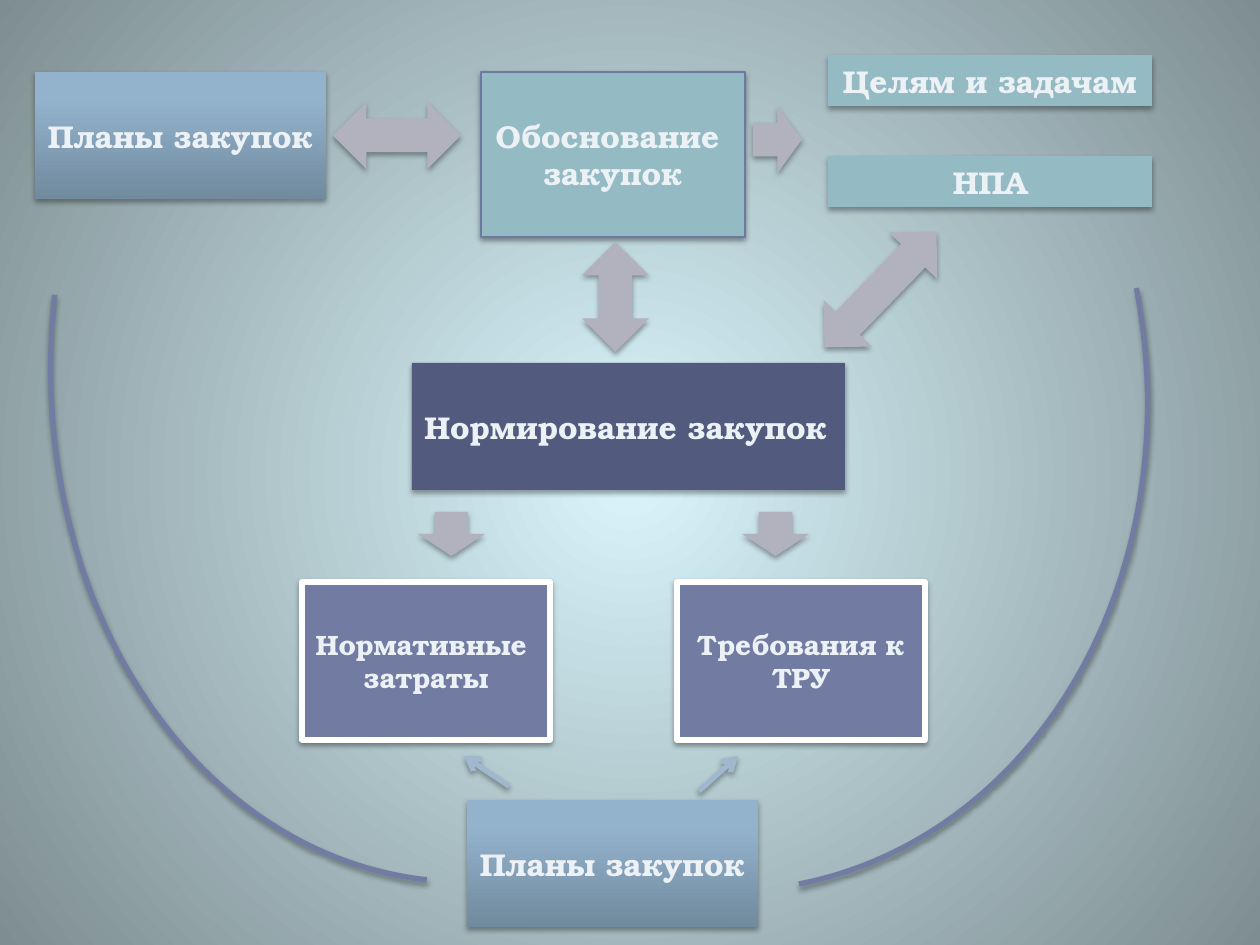
from dataclasses import dataclass

from lxml import etree
from pptx import Presentation
from pptx.dml.color import RGBColor
from pptx.enum.shapes import MSO_CONNECTOR, MSO_SHAPE
from pptx.enum.text import MSO_ANCHOR, MSO_AUTO_SIZE, PP_ALIGN
from pptx.oxml import parse_xml
from pptx.oxml.ns import nsdecls, qn
from pptx.util import Emu, Pt

RECT, ARC = MSO_SHAPE.RECTANGLE, MSO_SHAPE.ARC
ACROSS, UPRIGHT = MSO_SHAPE.LEFT_RIGHT_ARROW, MSO_SHAPE.UP_DOWN_ARROW
RIGHT, DOWN = MSO_SHAPE.RIGHT_ARROW, MSO_SHAPE.DOWN_ARROW
STRAIGHT = MSO_CONNECTOR.STRAIGHT
CENTER, LEFT = PP_ALIGN.CENTER, PP_ALIGN.LEFT
MIDDLE, FIXED = MSO_ANCHOR.MIDDLE, MSO_AUTO_SIZE.NONE


@dataclass(frozen=True)
class Theme:
    font: str = "TeX Gyre Bonum"
    text: str = "ECF1F5"
    large: int = 18
    small: int = 16
    teal: str = "94BAC3"
    navy: str = "525B7E"
    violet: str = "727CA3"
    outline: str = "6E79A1"
    white: str = "FFFFFF"
    arrow: str = "B2B2BE"
    pale: str = "9FB8CD"
    thin: float = 0.75
    thick: float = 3
    plan: tuple = ((0, "718A9E"), (80, "93B3CD"), (100, "93B4CF"))
    backdrop: tuple = ((0, "D9F5FC"), (100, "7E8D90"))
    flat_shadow: tuple = (35, 1.8)
    lined_shadow: tuple = (38, 1.6)
    blur: float = 3.1


THEME = Theme()
WIDTH, HEIGHT = 1260, 945
SCALE = 914400 / 126

PLAN_SIZE = (291, 127)
GOAL_SIZE = (324, 51)
NORM_SIZE = (248, 158)
DOWN_SIZE = (67, 44)

PLANS = [(35, 72), (467, 800)]
GOALS = [("Целям и задачам", 55), ("НПА", 156)]
NORMS = [("Нормативные \nзатраты", 302), ("Требования к ТРУ", 677)]
ARROWS = [
    (ACROSS, (333, 102, 128, 67), 0),
    (UPRIGHT, (582, 242, 67, 110), 0),
    (RIGHT, (753, 106, 49, 67), 0),
    (UPRIGHT, (847, 209, 67, 161), 44.1),
    (DOWN, (418, 512, *DOWN_SIZE), 0),
    (DOWN, (742, 512, *DOWN_SIZE), 0),
]
ARCS = [((52, -198, 868, 1081), 186.3), ((179, -72, 1041, 890), 79)]
POINTERS = [(509, 786, 464, 756), (699, 791, 738, 756)]


def px(*lengths):
    return [Emu(round(length * SCALE)) for length in lengths]


def set_gradient(fill, parent, stops, direction):
    fill.solid()
    marks = "".join(
        f'<a:gs pos="{place * 1000}"><a:srgbClr val="{color}"/></a:gs>'
        for place, color in stops
    )
    gradient = parse_xml(
        f'<a:gradFill {nsdecls("a")} rotWithShape="1">'
        f"<a:gsLst>{marks}</a:gsLst>{direction}</a:gradFill>"
    )
    parent.replace(parent.find(qn("a:solidFill")), gradient)


def add_shadow(effects, strength):
    alpha, distance = strength
    shadow = etree.SubElement(
        effects, qn("a:outerShdw"), blurRad=str(Pt(THEME.blur)),
        dist=str(Pt(distance)), dir="5400000", rotWithShape="0",
    )
    color = etree.SubElement(shadow, qn("a:srgbClr"), val="000000")
    etree.SubElement(color, qn("a:alpha"), val=str(alpha * 1000))


def set_line(line, color, width):
    line.color.rgb = RGBColor.from_string(color)
    line.width = Pt(width)


def add_figure(slide, kind, place, fill=None, line=None, angle=0,
               strength=THEME.flat_shadow):
    shape = slide.shapes.add_shape(kind, *px(*place))
    shape.rotation = angle
    properties = shape._element.spPr
    if fill is None:
        shape.fill.background()
    elif isinstance(fill, tuple):
        set_gradient(shape.fill, properties, fill, '<a:lin ang="16200000" scaled="0"/>')
    else:
        shape.fill.solid()
        shape.fill.fore_color.rgb = RGBColor.from_string(fill)
    if line:
        set_line(shape.line, *line)
    else:
        shape.line.fill.background()
    shape.shadow.inherit = False
    add_shadow(properties.find(qn("a:effectLst")), strength)
    return shape


def add_box(slide, text, place, fill, size=THEME.large, line=None,
            wrap=False, align=CENTER):
    strength = THEME.lined_shadow if line else THEME.flat_shadow
    box = add_figure(slide, RECT, place, fill, line, strength=strength)
    frame = box.text_frame
    frame.text = text
    frame.word_wrap = wrap
    frame.auto_size = FIXED
    frame.vertical_anchor = MIDDLE
    for para in frame.paragraphs:
        para.alignment = align
        for span in para.runs:
            span.font.name = THEME.font
            span.font.size = Pt(size)
            span.font.bold = True
            span.font.color.rgb = RGBColor.from_string(THEME.text)


def add_pointer(slide, ends):
    pointer = slide.shapes.add_connector(STRAIGHT, *px(*ends))
    set_line(pointer.line, THEME.pale, THEME.thick)
    properties = pointer._element.spPr
    etree.SubElement(properties.find(qn("a:ln")), qn("a:tailEnd"), type="arrow")
    add_shadow(etree.SubElement(properties, qn("a:effectLst")), THEME.flat_shadow)


def main():
    deck = Presentation()
    deck.slide_width, deck.slide_height = px(WIDTH, HEIGHT)
    page = deck.slides.add_slide(deck.slide_layouts[6])
    backdrop = page.background.fill
    backdrop.solid()
    set_gradient(
        backdrop, page._element.cSld.find(".//" + qn("p:bgPr")), THEME.backdrop,
        '<a:path path="circle"><a:fillToRect l="50000" t="50000" r="50000" b="50000"/></a:path>',
    )

    for corner in PLANS:
        add_box(page, "Планы закупок", (*corner, *PLAN_SIZE), THEME.plan)
    add_box(page, "Обоснование \nзакупок", (481, 72, 264, 165), THEME.teal,
            line=(THEME.outline, THEME.thin))
    add_box(page, "Нормирование закупок", (412, 363, 433, 127), THEME.navy,
            wrap=True, align=LEFT)
    for text, top in GOALS:
        add_box(page, text, (828, top, *GOAL_SIZE), THEME.teal)
    for text, left in NORMS:
        add_box(page, text, (left, 582, *NORM_SIZE), THEME.violet, THEME.small,
                (THEME.white, THEME.thick), wrap=True)
    for kind, place, angle in ARROWS:
        add_figure(page, kind, place, THEME.arrow, angle=angle)
    for place, angle in ARCS:
        add_figure(page, ARC, place, line=(THEME.violet, THEME.thick), angle=angle)
    for ends in POINTERS:
        add_pointer(page, ends)
    deck.save("out.pptx")


if __name__ == "__main__":
    main()
